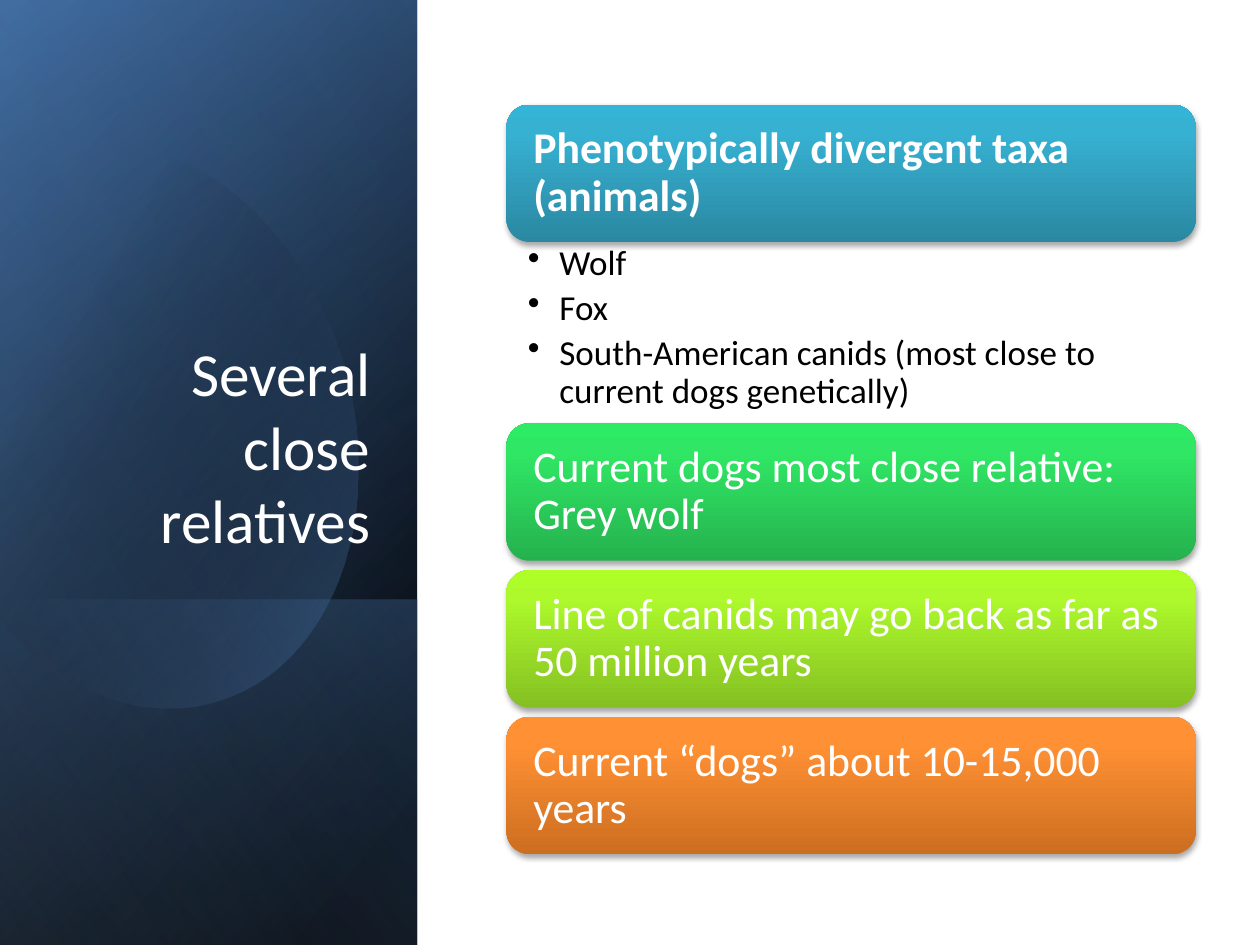
from dataclasses import dataclass

from pptx import Presentation
from pptx.dml.color import RGBColor
from pptx.enum.shapes import MSO_SHAPE
from pptx.enum.text import MSO_ANCHOR, PP_ALIGN
from pptx.oxml import parse_xml
from pptx.oxml.ns import nsdecls, qn
from pptx.util import Inches, Pt

RECT, ROUND = MSO_SHAPE.RECTANGLE, MSO_SHAPE.ROUNDED_RECTANGLE
TOP, MIDDLE, BOTTOM = MSO_ANCHOR.TOP, MSO_ANCHOR.MIDDLE, MSO_ANCHOR.BOTTOM
LEFT, RIGHT = PP_ALIGN.LEFT, PP_ALIGN.RIGHT


@dataclass(frozen=True)
class Theme:
    font: str = "Calibri"
    white: str = "FFFFFF"
    black: str = "000000"
    navy: str = "376092"
    blue: str = "4F81BD"
    pale: str = "95B3D7"
    title: int = 35
    card: int = 25
    item: int = 20
    # Dark, middle and light tone of each card
    tones: tuple = (
        ("2A88A2", "37B1D2", "34B4D6"),
        ("25B24E", "30E765", "2DEB64"),
        ("85C022", "ADF92C", "AFFE28"),
        ("CC6E20", "FF9034", "FF9136"),
    )


THEME = Theme()
CARDS = (
    "Phenotypically divergent taxa (animals)",
    "Current dogs most close relative: Grey wolf",
    "Line of canids may go back as far as 50 million years",
    "Current “dogs” about 10-15,000 years",
)
ITEMS = (
    "Wolf",
    "Fox",
    "South-American canids (most close to current dogs genetically)",
)


def shade(shape, stops, angle):
    """Fill with (position, colour, opacity) stops, without line or shadow."""
    marks = "".join(
        f'<a:gs pos="{pos * 1000}"><a:srgbClr val="{tint}">'
        f'<a:alpha val="{alpha * 1000}"/></a:srgbClr></a:gs>'
        for pos, tint, alpha in stops
    )
    shape.fill.background()
    props = shape._element.spPr
    props.replace(props.find(qn("a:noFill")), parse_xml(
        f'<a:gradFill {nsdecls("a")}><a:gsLst>{marks}</a:gsLst>'
        f'<a:lin ang="{angle * 60000}" scaled="0"/></a:gradFill>'))
    shape.line.fill.background()
    shape.shadow.inherit = False


def drop(shape):
    """Give the shape a soft shadow below."""
    shape._element.spPr.find(qn("a:effectLst")).append(parse_xml(
        f'<a:outerShdw {nsdecls("a")} blurRad="{Pt(3.1)}" dist="{Pt(1.8)}" '
        'dir="5400000" rotWithShape="0"><a:srgbClr val="000000">'
        '<a:alpha val="35000"/></a:srgbClr></a:outerShdw>'))


def write(shape, lines, size, tint, anchor, insets, align=LEFT, bold=False):
    frame = shape.text_frame
    frame.word_wrap = True
    frame.vertical_anchor = anchor
    (frame.margin_left, frame.margin_top,
     frame.margin_right, frame.margin_bottom) = map(Inches, insets)
    frame.text = "\n".join(lines)
    for para in frame.paragraphs:
        para.alignment = align
        font = para.font
        font.name, font.size, font.bold = THEME.font, Pt(size), bold
        font.color.rgb = RGBColor.from_string(tint)
    return frame.paragraphs


def layer(slide, left, top, width, height, stops, angle):
    """Add a mirrored rectangle, turned a quarter, that covers the box."""
    shape = slide.shapes.add_shape(
        RECT, Inches(left + (width - height) / 2),
        Inches(top + (height - width) / 2), Inches(height), Inches(width))
    shape.rotation = 90
    shape._element.spPr.xfrm.set("flipH", "1")
    shade(shape, stops, angle)


def curve(start, ctrl1, ctrl2, end, steps=24):
    """Points along a cubic curve, after its start."""
    for step in range(1, steps + 1):
        t = step / steps
        u = 1 - t
        yield tuple(
            u**3 * a + 3 * u * u * t * b + 3 * u * t * t * c + t**3 * d
            for a, b, c, d in zip(start, ctrl1, ctrl2, end))


def oval(slide, left, top):
    """Add the faint oval, cut off at its left side."""
    start = (0.96, 0.08)
    arcs = (
        ((1.71, 0.16), (2.44, 0.86), (2.73, 1.84)),
        ((3.07, 3.06), (2.62, 4.25), (1.71, 4.51)),
        ((1.14, 4.68), (0.53, 4.44), (0.07, 3.94)),
        ((-0.03, 3.82), (-0.25, 0.6), (-0.15, 0.48)),
        ((0.02, 0.31), (0.22, 0.19), (0.45, 0.12)),
        ((0.62, 0.07), (0.79, 0.06), start),
    )
    spots, pen = [], start
    for number, arc in enumerate(arcs):
        # The fourth side is the straight cut
        spots += arc if number == 3 else curve(pen, *arc)
        pen = arc[-1]
    spots = [(Inches(left + x), Inches(top + y)) for x, y in spots]
    build = slide.shapes.build_freeform(*spots[-1])
    build.add_line_segments(spots[:-1], close=True)
    shade(build.convert_to_shape(),
          ((29, THEME.black, 0), (100, THEME.blue, 43)), 30)


def panel(slide, left, top, width, height):
    """Dark side panel with its layers of light and the title."""
    box = (left, top, width, height)
    black, blue = THEME.black, THEME.blue
    layer(slide, *box, ((8, black, 100), (100, THEME.navy, 100)), 50)
    layer(slide, *box, ((0, black, 0), (99, blue, 46)), 30)
    foot = 2.74
    layer(slide, left, top + height - foot, width, foot,
          ((2, blue, 29), (100, black, 30)), 130)
    oval(slide, left, top + 1.06)
    layer(slide, *box, ((0, black, 0), (99, THEME.pale, 11)), 120)
    title = slide.shapes.add_textbox(
        Inches(left + 0.48), Inches(top + 1.84), Inches(2.56), Inches(2.62))
    write(title, ["Several close relatives"], THEME.title, THEME.white,
          BOTTOM, (0.1, 0.05, 0.1, 0.05), RIGHT)


def card(slide, left, top, width, height, text, tones, bold):
    shape = slide.shapes.add_shape(
        ROUND, Inches(left), Inches(top), Inches(width), Inches(height))
    shade(shape, [(pos, tone, 100) for pos, tone in zip((0, 80, 100), tones)],
          270)
    drop(shape)
    for para in write(shape, [text], THEME.card, THEME.white, MIDDLE,
                      (0.16, 0.15, 0.16, 0.15), bold=bold):
        para.line_spacing = 0.9


def bullets(slide, left, top, width, height):
    shape = slide.shapes.add_textbox(
        Inches(left), Inches(top), Inches(width), Inches(height))
    for para in write(shape, ITEMS, THEME.item, THEME.black, TOP,
                      (0.17, 0.03, 0.19, 0.03)):
        para.line_spacing = 0.9
        para.space_after = Pt(4)
        props = para._p.get_or_add_pPr()
        props.set("marL", str(Inches(0.25)))
        props.set("indent", str(Inches(-0.25)))
        mark = parse_xml(f'<a:buChar {nsdecls("a")} char="•"/>')
        props.find(qn("a:defRPr")).addprevious(mark)


def stack(slide, left, top, width, height):
    """Cards from top to bottom, with the list below the first."""
    tall, room = 1.09, 1.44
    gap = (height - len(CARDS) * tall - room) / (len(CARDS) - 2)
    for number, (text, tones) in enumerate(zip(CARDS, THEME.tones)):
        first = number == 0
        card(slide, left, top, width, tall, text, tones, first)
        top += tall
        if first:
            bullets(slide, left, top, width, room)
        top += room if first else gap


def main():
    deck = Presentation()
    deck.slide_width, deck.slide_height = Inches(10), Inches(7.5)
    slide = deck.slides.add_slide(deck.slide_layouts[6])
    panel(slide, 0, 0, 3.31, 7.5)
    stack(slide, 4.02, 0.83, 5.47, 5.95)
    deck.save("out.pptx")


if __name__ == "__main__":
    main()
